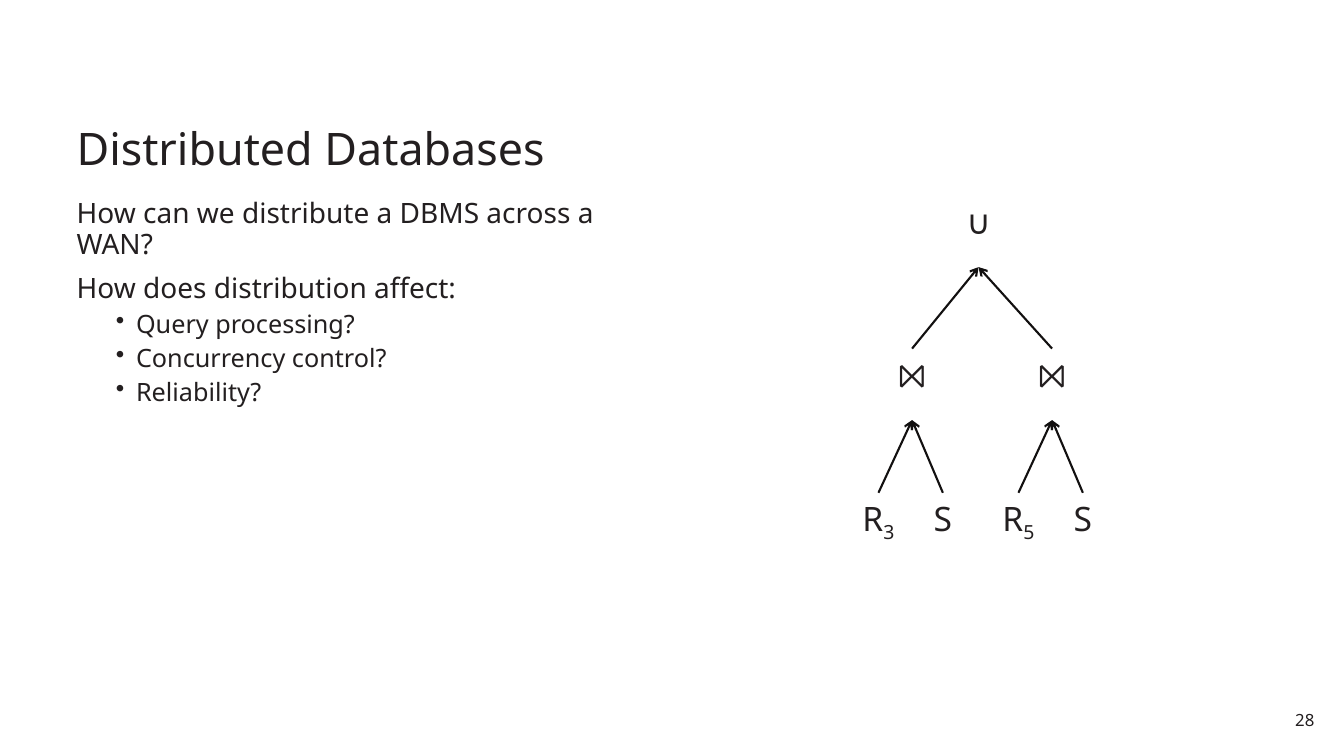
from pptx import Presentation
from pptx.dml.color import RGBColor
from pptx.enum.shapes import MSO_CONNECTOR
from pptx.enum.text import MSO_ANCHOR, PP_ALIGN
from pptx.oxml.ns import qn
from pptx.util import Pt
from lxml import etree

LINE = MSO_CONNECTOR.STRAIGHT
TOP, BASE = MSO_ANCHOR.TOP, MSO_ANCHOR.BOTTOM
LEFT, MID, RIGHT = PP_ALIGN.LEFT, PP_ALIGN.CENTER, PP_ALIGN.RIGHT


def color(code):
    return RGBColor.from_string(code)


class Deck:
    font = "Noto Sans"
    ink = "231F20"
    edge = "121010"

    def __init__(self, wide, high):
        self.prs = Presentation()
        self.prs.slide_width, self.prs.slide_height = Pt(wide), Pt(high)
        self.slide = self.prs.slides.add_slide(self.prs.slide_layouts[6])

    def box(self, x, y, w, h, anchor=TOP, wrap=True, pad=(5.7, 3)):
        shape = self.slide.shapes.add_textbox(Pt(x), Pt(y), Pt(w), Pt(h))
        frame = shape.text_frame
        frame.word_wrap = wrap
        frame.vertical_anchor = anchor
        frame.margin_left = frame.margin_right = Pt(pad[0])
        frame.margin_top = frame.margin_bottom = Pt(pad[1])
        return frame

    def text(self, frame, words, size=24, align=LEFT, gap=0, lead=1.0,
             bullet=False, sub="", first=True):
        para = frame.paragraphs[0] if first else frame.add_paragraph()
        para.alignment = align
        para.line_spacing = lead
        para.space_before = Pt(gap)
        if bullet:
            props = para._p.get_or_add_pPr()
            props.set("marL", str(Pt(42.5)))
            props.set("indent", str(-Pt(14.4)))
            etree.SubElement(props, qn("a:buChar")).set("char", "•")
        for part in filter(None, (words, sub)):
            run = para.add_run()
            run.text = part
            run.font.name, run.font.size = self.font, Pt(size)
            run.font.color.rgb = color(self.ink)
        if sub:
            run._r.get_or_add_rPr().set("baseline", "-25000")

    def node(self, x, y, words, sub=""):
        frame = self.box(x - 28, y, 56, HIGH, wrap=False, pad=(7.2, 3.6))
        self.text(frame, words, align=MID, sub=sub)

    def arrow(self, x1, y1, x2, y2):
        link = self.slide.shapes.add_connector(
            LINE, Pt(x1), Pt(y1), Pt(x2), Pt(y2))
        link.line.color.rgb = color(self.edge)
        link.line.width = Pt(1.5)
        tail = etree.SubElement(link.line._get_or_add_ln(), qn("a:tailEnd"))
        tail.set("type", "arrow")
        etree.SubElement(link._element.spPr, qn("a:effectLst"))


HIGH = 51.1  # height of a tree node
ROOT, JOIN, LEAF = 139.7, 249, 352  # tops of the tree levels


def main():
    deck = Deck(960, 540)

    # Page number and title
    deck.text(deck.box(910.8, 502.5, 33.8, 22.3, pad=(5.7, 4.3)), "28",
              size=12, align=RIGHT)
    deck.text(deck.box(49, 54.7, 862, 73.4, anchor=BASE),
              "Distributed Databases", size=32, lead=0.9)

    # Questions
    body = deck.box(49, 139.7, 425.5, 351.4)
    deck.text(body, "How can we distribute a DBMS across a WAN?",
              size=20, lead=0.9)
    deck.text(body, "How does distribution affect:", size=20, gap=10,
              lead=0.9, first=False)
    for item in ("Query processing?", "Concurrency control?", "Reliability?"):
        deck.text(body, item, size=18, gap=5, lead=0.9, bullet=True,
                  first=False)

    # Query tree: a union over two joins
    top = 699
    deck.node(top, ROOT, "∪")
    for mid, sub in ((651.5, "3"), (751.5, "5")):
        deck.node(mid, JOIN, "⨝")
        deck.arrow(mid, JOIN, top, ROOT + HIGH)
        for x, name, mark in ((mid - 24, "R", sub), (mid + 22, "S", "")):
            deck.node(x, LEAF, name, sub=mark)
            deck.arrow(x, LEAF, mid, JOIN + HIGH)

    deck.prs.save("out.pptx")


if __name__ == "__main__":
    main()
